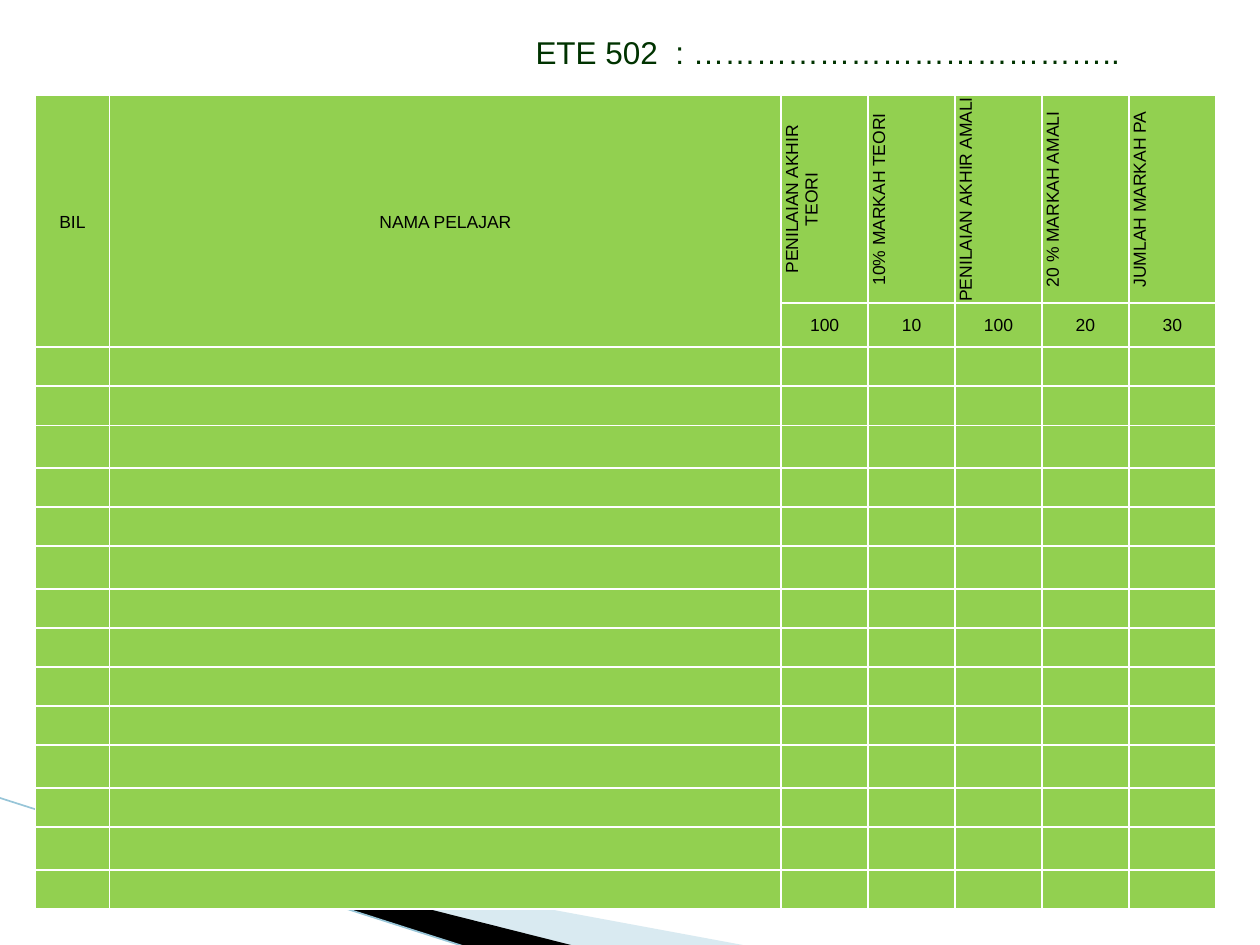
from lxml.etree import SubElement
from pptx import Presentation
from pptx.dml.color import RGBColor
from pptx.enum.shapes import MSO_CONNECTOR
from pptx.enum.text import MSO_ANCHOR, MSO_AUTO_SIZE, PP_ALIGN
from pptx.oxml import parse_xml
from pptx.oxml.ns import nsdecls, qn
from pptx.util import Inches, Pt

COLORS = {
    "title": "003300",
    "text": "000000",
    "cell": "92D050",
    "border": "FFFFFF",
    "pale_band": "A0CBDC",
    "dark_band": "000000",
    "edge": "97C5D8",
}
FONT = "Arial"
COLUMN_WIDTHS = [0.59, 5.33] + [0.69] * 5
STUDENT_ROWS = 14
TALL_STUDENT_ROWS = {2, 5, 10, 12}
ROW_HEIGHTS = [1.28, 0.35] + [
    0.34 if row in TALL_STUDENT_ROWS else 0.31 for row in range(STUDENT_ROWS)
]
STUDENT_HEADINGS = ["BIL", "NAMA PELAJAR"]
MARK_HEADINGS = [
    ("PENILAIAN AKHIR TEORI", "100"),
    ("10% MARKAH TEORI", "10"),
    ("PENILAIAN AKHIR AMALI", "100"),
    ("20 % MARKAH AMALI", "20"),
    ("JUMLAH MARKAH PA", "30"),
]
CELL_FORMAT = {
    "vertical_anchor": MSO_ANCHOR.MIDDLE,
    "margin_left": Inches(0.01),
    "margin_right": Inches(0.01),
    "margin_top": Inches(0.01),
    "margin_bottom": 0,
}


def rgb(name):
    return RGBColor.from_string(COLORS[name])


def set_attributes(target, values):
    for name, value in values.items():
        setattr(target, name, value)


def add_band(slide, left, top, offsets, color, opacity=100):
    """Draw a filled outline whose points are offsets from left and top."""
    points = [(Inches(left + x), Inches(top + y)) for x, y in offsets]
    builder = slide.shapes.build_freeform(*points[0], scale=1.0)
    builder.add_line_segments(points[1:], close=True)
    band = builder.convert_to_shape()
    band.shadow.inherit = False
    band.fill.solid()
    band.fill.fore_color.rgb = rgb(color)
    band.line.fill.background()
    if opacity < 100:
        fill_color = band.fill._xPr.find(qn("a:solidFill"))[0]
        SubElement(fill_color, qn("a:alpha"), val=str(opacity * 1000))


def add_corner_decoration(slide, left, top):
    add_band(slide, left + 0.56, top + 0.17,
             [(0, 0.01), (5.4, 1.01), (4.01, 1.01), (0, 0)], "pale_band", 40)
    add_band(slide, left + 0.54, top + 0.16,
             [(0, 0), (4.04, 1.02), (3.19, 1.03), (0.01, 0.01)], "dark_band")
    edge = slide.shapes.add_connector(
        MSO_CONNECTOR.STRAIGHT, Inches(left), Inches(top),
        Inches(left + 3.72), Inches(top + 1.19))
    edge.line.color.rgb = rgb("edge")
    edge.line.width = Pt(0.95)
    SubElement(edge._element.spPr, qn("a:effectLst"))


def add_title(slide, left, top, width, height):
    title = slide.shapes.title
    set_attributes(title, {
        "left": Inches(left), "top": Inches(top),
        "width": Inches(width), "height": Inches(height),
    })
    frame = title.text_frame
    frame.text = "ETE 502  : ………………………………….."
    set_attributes(frame, {
        "word_wrap": False,
        "auto_size": MSO_AUTO_SIZE.SHAPE_TO_FIT_TEXT,
        "vertical_anchor": MSO_ANCHOR.TOP,
    })
    paragraph = frame.paragraphs[0]
    paragraph.alignment = PP_ALIGN.LEFT
    font = paragraph.runs[0].font
    set_attributes(font, {"name": FONT, "size": Pt(18)})
    font.color.rgb = rgb("title")


def style_cell(cell):
    properties = cell._tc.get_or_add_tcPr()
    for side in ("lnL", "lnR", "lnT", "lnB"):
        properties.append(parse_xml(
            f'<a:{side} {nsdecls("a")} w="{Pt(1)}"><a:solidFill>'
            f'<a:srgbClr val="{COLORS["border"]}"/></a:solidFill></a:{side}>'))
    cell.fill.solid()
    cell.fill.fore_color.rgb = rgb("cell")
    set_attributes(cell, CELL_FORMAT)
    # Keeps the line height of an empty cell below its row height
    SubElement(cell.text_frame.paragraphs[0]._p, qn("a:endParaRPr"),
               sz=str(1000))


def write_cell(cell, text, upward=False):
    paragraph = cell.text_frame.paragraphs[0]
    paragraph.alignment = PP_ALIGN.CENTER
    run = paragraph.add_run()
    run.text = text
    set_attributes(run.font, {"name": FONT, "size": Pt(10), "bold": False})
    run.font.color.rgb = rgb("text")
    if upward:
        cell._tc.tcPr.set("vert", "vert270")


def add_mark_table(slide, left, top, width, height):
    table = slide.shapes.add_table(
        len(ROW_HEIGHTS), len(COLUMN_WIDTHS), Inches(left), Inches(top),
        Inches(width), Inches(height)).table
    set_attributes(table, {"first_row": False, "horz_banding": False})
    for column, column_width in zip(table.columns, COLUMN_WIDTHS):
        column.width = Inches(column_width)
    for row, row_height in zip(table.rows, ROW_HEIGHTS):
        row.height = Inches(row_height)
    for cell in table.iter_cells():
        style_cell(cell)

    for column, heading in enumerate(STUDENT_HEADINGS):
        table.cell(0, column).merge(table.cell(1, column))
        write_cell(table.cell(0, column), heading)
    for column, (heading, full_mark) in enumerate(
            MARK_HEADINGS, len(STUDENT_HEADINGS)):
        write_cell(table.cell(0, column), heading, upward=True)
        write_cell(table.cell(1, column), full_mark)


def main():
    presentation = Presentation()
    presentation.slide_width = Inches(10)
    presentation.slide_height = Inches(7.5)
    slide = presentation.slides.add_slide(presentation.slide_layouts[5])
    add_corner_decoration(slide, -0.01, 6.33)
    add_title(slide, 4.15, 0.21, 4.89, 0.4)
    add_mark_table(slide, 0.28, 0.76, sum(COLUMN_WIDTHS), sum(ROW_HEIGHTS))
    presentation.save("out.pptx")


if __name__ == "__main__":
    main()
